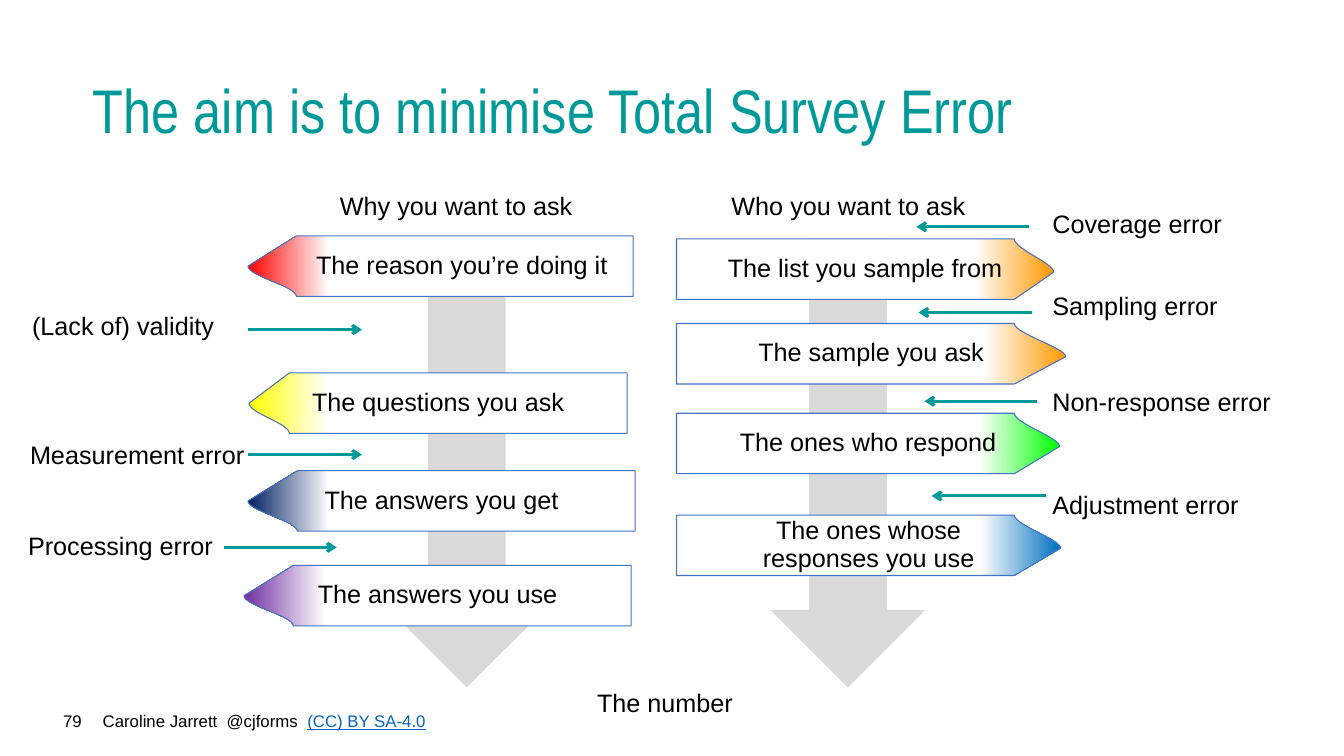
"""Build the Total Survey Error slide: two paths of steps with the errors between them."""
from lxml.etree import SubElement
from pptx import Presentation
from pptx.dml.color import RGBColor
from pptx.enum.shapes import MSO_CONNECTOR as Connector, MSO_SHAPE as Shape
from pptx.enum.text import MSO_ANCHOR as Anchor, MSO_AUTO_SIZE as AutoSize, PP_ALIGN as Align
from pptx.oxml.ns import qn
from pptx.util import Pt

PX = 9144
TEAL = RGBColor(0x00, 0x99, 0x99)
BLACK = RGBColor(0x00, 0x00, 0x00)
WHITE = RGBColor(0xFF, 0xFF, 0xFF)
GREY = RGBColor(0xD9, 0xD9, 0xD9)
OUTLINE = RGBColor(0x44, 0x72, 0xC4)
LINK = RGBColor(0x05, 0x63, 0xC1)
RED = RGBColor(0xFF, 0x00, 0x00)
YELLOW = RGBColor(0xFF, 0xFF, 0x00)
NAVY = RGBColor(0x00, 0x20, 0x60)
PURPLE = RGBColor(0x70, 0x30, 0xA0)
ORANGE = RGBColor(0xFF, 0x99, 0x00)
GREEN = RGBColor(0x00, 0xFF, 0x00)
BLUE = RGBColor(0x00, 0x70, 0xC0)

BOX_HEIGHT = 60
CURVE_STEPS = 16

deck = Presentation()
deck.slide_width, deck.slide_height = 1333 * PX, 750 * PX
page = deck.slides.add_slide(deck.slide_layouts[5])


def write(shape, text, size=18, font="Arial", color=BLACK, align=Align.LEFT,
          anchor=Anchor.MIDDLE, spacing=1.0, inset=None, indent=0):
    frame = shape.text_frame
    frame.text = text
    frame.word_wrap = True
    frame.auto_size = AutoSize.NONE
    frame.vertical_anchor = anchor
    if inset is not None:
        frame.margin_left = (inset + indent) * PX
        frame.margin_right = frame.margin_top = frame.margin_bottom = inset * PX
    para = frame.paragraphs[0]
    para.alignment, para.line_spacing = align, spacing
    for span in para.runs:
        span.font.size, span.font.name, span.font.color.rgb = Pt(size), font, color
    return para


def add_text(left, top, width, height, text, **style):
    box = page.shapes.add_textbox(left * PX, top * PX, width * PX, height * PX)
    return write(box, text, **style)


title = page.shapes.title
title.left, title.top, title.width, title.height = 82 * PX, 40 * PX, 1160 * PX, 145 * PX
write(title, "The aim is to minimise Total Survey Error", size=44, font="Arial Narrow",
      color=TEAL, spacing=0.9)

credit = add_text(92, 700, 571, 30, "Caroline Jarrett  @cjforms  ", size=12, anchor=Anchor.TOP)
licence = credit.add_run()
licence.text = "(CC) BY SA-4.0"
licence.font.size, licence.font.name, licence.font.color.rgb = Pt(12), "Arial", LINK
licence.font.underline = True
add_text(-25, 700, 116, 30, "79", size=12, align=Align.RIGHT, anchor=Anchor.TOP)

for left in (386, 764):
    path_arrow = page.shapes.add_shape(Shape.DOWN_ARROW, left * PX, 237 * PX, 154 * PX, 445 * PX)
    path_arrow.shadow.inherit = False
    path_arrow.fill.solid()
    path_arrow.fill.fore_color.rgb = GREY
    path_arrow.line.fill.background()

for left, top, width, height, heading in (
    (534, 669, 251, 60, "The number"),
    (279, 177, 347, 57, "Why you want to ask"),
    (716, 177, 251, 57, "Who you want to ask"),
):
    add_text(left, top, width, height, heading, align=Align.CENTER, spacing=0.9, inset=3)

for label, text_left, text_middle, start, end, arrow_y in (
    ("Coverage error", 1034, 222, 1021, 909, 225),
    ("Sampling error", 1034, 303, 1024, 911, 310),
    ("Non-response error", 1034, 398, 1029, 917, 398),
    ("Adjustment error", 1034, 500, 1037, 924, 492),
    ("(Lack of) validity", 22, 323, 246, 359, 327),
    ("Measurement error", 20, 451, 246, 359, 451),
    ("Processing error", 18, 541, 222, 334, 543),
):
    arrow = page.shapes.add_connector(
        Connector.STRAIGHT, start * PX, arrow_y * PX, end * PX, arrow_y * PX)
    arrow.line.color.rgb, arrow.line.width = TEAL, Pt(2.25)
    SubElement(arrow.line._get_or_add_ln(), qn("a:tailEnd"), type="arrow")
    SubElement(arrow._element.spPr, qn("a:effectLst"))
    add_text(text_left, text_middle - 44, 260, 88, label)

for text, top, far, shoulder, tip, color, indent in (
    ("The reason you’re doing it", 234, 628, 294, 246, RED, 42),
    ("The questions you ask", 370, 622, 287, 247, YELLOW, 0),
    ("The answers you get", 467, 630, 295, 246, NAVY, 0),
    ("The answers you use", 561, 626, 291, 242, PURPLE, 0),
    ("The list you sample from", 237, 671, 1006, 1045, ORANGE, 0),
    ("The sample you ask", 321, 671, 1006, 1057, ORANGE, 0),
    ("The ones who respond", 410, 671, 1006, 1051, GREEN, 0),
    ("The ones whose\vresponses you use", 511, 671, 1006, 1052, BLUE, 0),
):
    points_right = tip > far
    bottom = top + BOX_HEIGHT
    curve_y, other_y = (top, bottom) if points_right else (bottom, top)
    offsets = (10, 24, 33) if points_right else (-10, -20, -30)
    outline = []
    for step in range(CURVE_STEPS + 1):
        t = step / CURVE_STEPS
        near_tip = 3 * (1 - t) * t ** 2 + t ** 3
        rise = (3 * (1 - t) ** 2 * t * offsets[0] + 3 * (1 - t) * t ** 2 * offsets[1]
                + t ** 3 * offsets[2])
        outline.append((shoulder + (tip - shoulder) * near_tip, curve_y + rise))
    outline += [(shoulder, other_y), (far, other_y), (far, curve_y)]
    outline = [(round(x * PX), round(y * PX)) for x, y in outline]
    builder = page.shapes.build_freeform(*outline[0])
    builder.add_line_segments(outline[1:], close=True)
    step_box = builder.convert_to_shape()
    step_box.shadow.inherit = False
    step_box.fill.gradient()
    step_box.fill.gradient_angle = 180 if points_right else 0
    for stop, position, stop_color in zip(step_box.fill.gradient_stops, (0, 0.21), (color, WHITE)):
        stop.position, stop.color.rgb = position, stop_color
    step_box.line.color.rgb, step_box.line.width = OUTLINE, Pt(0.75)
    write(step_box, text, align=Align.CENTER, spacing=0.9, inset=3, indent=indent)

deck.save("out.pptx")
